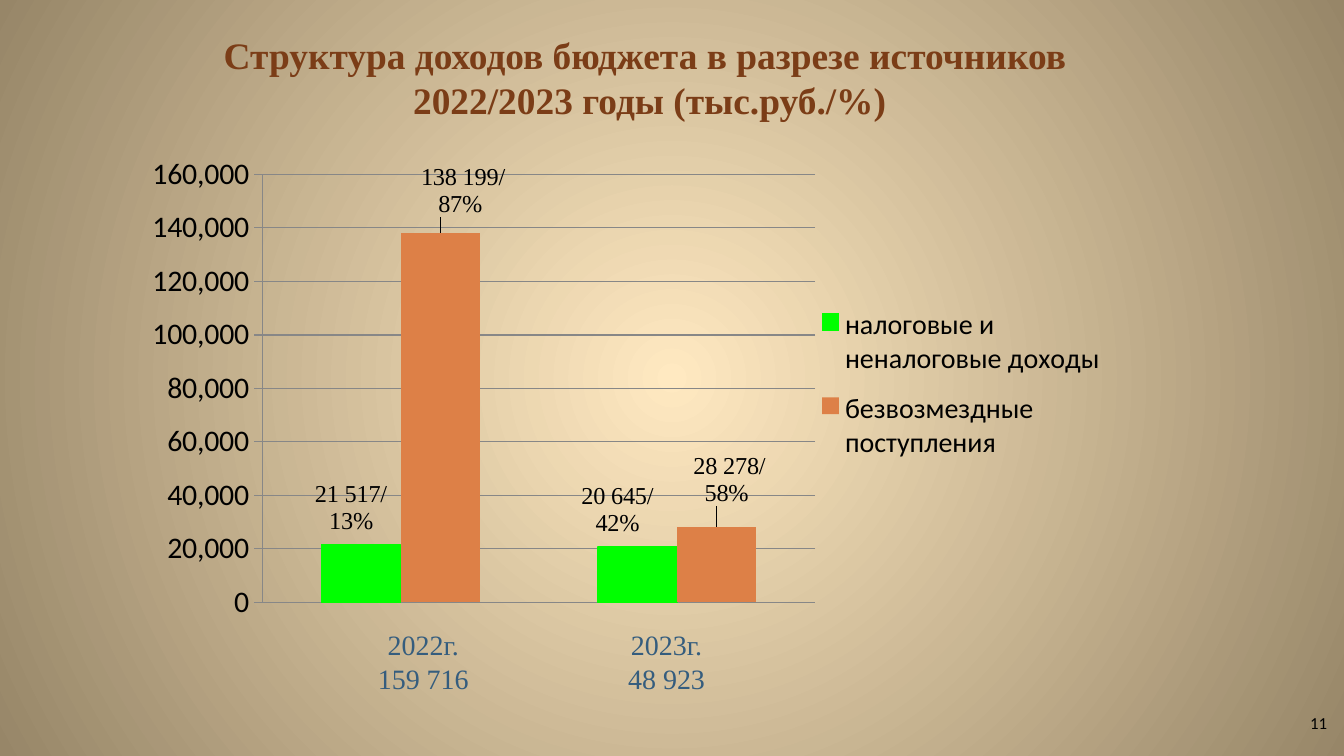
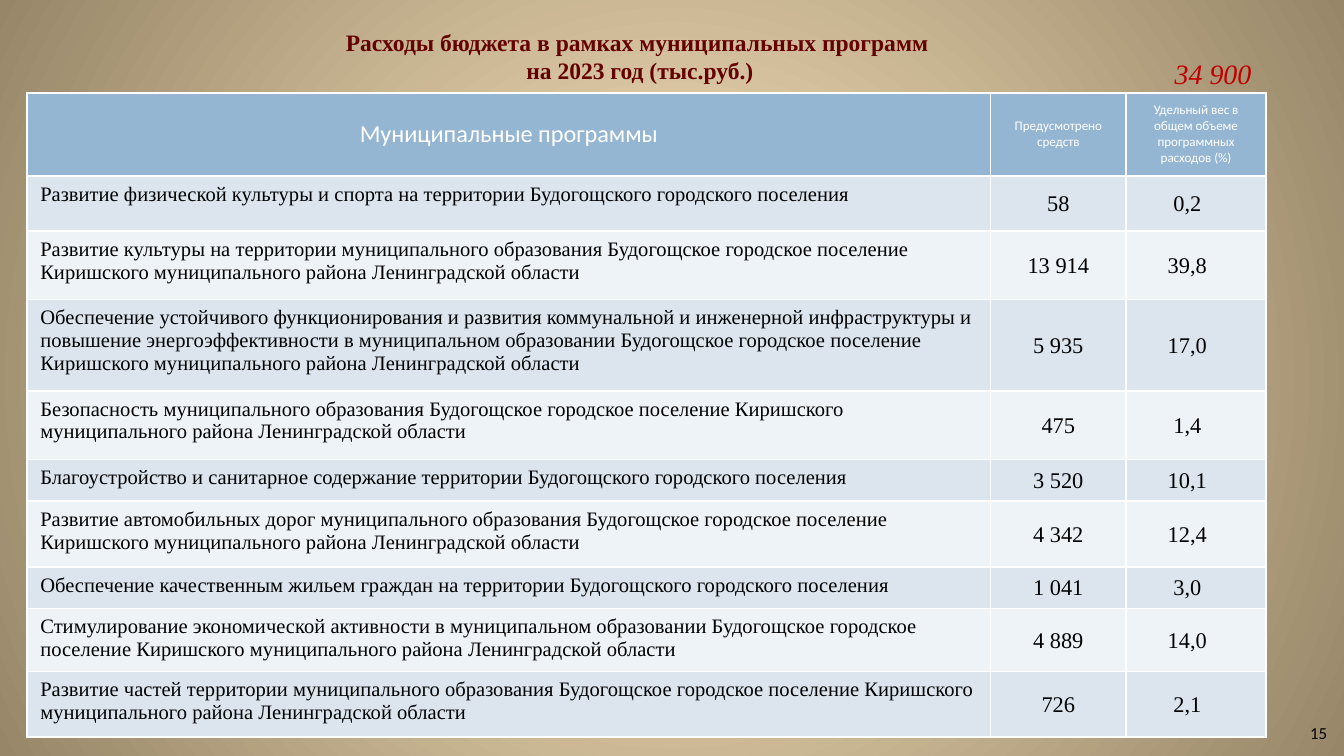
"""Build two budget slides: income by source and spending by programme."""
from dataclasses import dataclass

from lxml import etree
from pptx import Presentation
from pptx import util as u
from pptx.chart import data as cd
from pptx.dml import color as dc
from pptx.enum import chart as ce
from pptx.enum import text as te
from pptx.oxml import ns


@dataclass(frozen=True)
class Theme:
    """Colours, fonts and type sizes shared by the slides."""
    serif: str = "Times New Roman"
    sans: str = "Calibri"
    ink: str = "000000"
    white: str = "FFFFFF"
    glow: str = "FFE9C1"
    edge: str = "978668"
    brown: str = "7B3D17"
    wine: str = "640000"
    red: str = "C00000"
    blue: str = "355D7E"
    green: str = "00FF00"
    orange: str = "DD8047"
    grid: str = "878787"
    head: str = "94B6D2"
    bands: tuple = ("DCE5EE", "EEF3F7")
    title: float = 20
    small: float = 12.6
    note: float = 15
    page: float = 9
    chart: float = 18
    axis: float = 16
    tag: float = 13
    heads: tuple = (13, 7, 7)
    cells: tuple = (11, 12, 12)


T = Theme()
MID, TOP = te.MSO_ANCHOR.MIDDLE, te.MSO_ANCHOR.TOP
LEFT, CENTER, RIGHT = te.PP_ALIGN.LEFT, te.PP_ALIGN.CENTER, te.PP_ALIGN.RIGHT
C15 = "http://schemas.microsoft.com/office/drawing/2012/chart"

SERIES = (
    ("налоговые и неналоговые доходы", (21517, 20645), T.green,
     (("21 517/\n13%", -0.01, -0.01), ("20 645/\n42%", -0.02, -0.01))),
    ("безвозмездные поступления", (138199, 28278), T.orange,
     ((" 138 199/\n87%", 0.02, -0.02), (" 28 278/\n58%", 0.01, -0.03))),
)
YEARS = (("2022г.\n159 716", (2.48, 4.62, 1.34, 0.61)),
         ("2023г.\n48 923", (4.21, 4.62, 1.5, 0.61)))

AREA = "Киришского муниципального района Ленинградской области"
TOWN = f"Будогощское городское поселение {AREA}"
LAND = "территории Будогощского городского поселения"
HEADS = ("Муниципальные программы", "Предусмотрено средств",
         "Удельный вес в общем объеме программных расходов (%)")
ROWS = (
    (0.41, f"Развитие физической культуры и спорта на {LAND}", "58", "0,2"),
    (0.51, f"Развитие культуры на территории муниципального образования {TOWN}",
     "13 914", "39,8"),
    (0.68, "Обеспечение устойчивого функционирования и развития коммунальной и "
     "инженерной инфраструктуры и повышение энергоэффективности в "
     f"муниципальном образовании {TOWN}", "5 935", "17,0"),
    (0.51, f"Безопасность муниципального образования {TOWN}", "475", "1,4"),
    (0.31, f"Благоустройство и санитарное содержание {LAND}", "3 520", "10,1"),
    (0.49, f"Развитие автомобильных дорог муниципального образования {TOWN}",
     "4 342", "12,4"),
    (0.31, f"Обеспечение качественным жильем граждан на {LAND}", "1 041", "3,0"),
    (0.39, "Стимулирование экономической активности в муниципальном "
     f"образовании {TOWN}", "4 889", "14,0"),
    (0.49, f"Развитие частей территории муниципального образования {TOWN}",
     "726", "2,1"),
)


def rgb(hue):
    """Turn a hex string into a colour."""
    return dc.RGBColor.from_string(hue)


def ink(font, size, hue=T.ink, face=T.serif, bold=False, slant=False):
    """Style one font."""
    font.size, font.name = u.Pt(size), face
    font.bold, font.italic = bold, slant
    font.color.rgb = rgb(hue)


def fill_text(frame, words, size, align=LEFT, **look):
    """Put words in a text frame and format its runs."""
    frame.text = words
    for para in frame.paragraphs:
        para.alignment = align
        for run in para.runs:
            ink(run.font, size, **look)


def label(slide, box, words, size, align=CENTER, anchor=TOP, **look):
    """Add a text box."""
    frame = slide.shapes.add_textbox(*map(u.Inches, box)).text_frame
    frame.word_wrap = True
    frame.vertical_anchor = anchor
    fill_text(frame, words, size, align, **look)


def base(deck, title, box, size, hue, page, top):
    """Add a slide with its glow, title and page number."""
    slide = deck.slides.add_slide(deck.slide_layouts[6])
    fill = slide.background.fill
    fill.gradient()
    for stop, tone, spot in zip(fill.gradient_stops, (T.glow, T.edge), (0, 1)):
        stop.color.rgb, stop.position = rgb(tone), spot
    grad = slide.element.find(".//" + ns.qn("a:gradFill"))
    grad.remove(grad.find(ns.qn("a:lin")))
    ring = etree.SubElement(grad, ns.qn("a:path"), path="circle")
    etree.SubElement(ring, ns.qn("a:fillToRect"),
                     {side: "50000" for side in "ltrb"})
    label(slide, box, title, size, anchor=MID, hue=hue, bold=True)
    label(slide, (9.65, top, 0.42, 0.25), page, T.page, LEFT, face=T.sans)
    return slide


def layout(host, spot, inner=False, **parts):
    """Insert a manual chart layout at the given child position."""
    for old in host.findall(ns.qn("c:layout")):
        host.remove(old)
    node = etree.Element(ns.qn("c:layout"))
    man = etree.SubElement(node, ns.qn("c:manualLayout"))
    if inner:
        etree.SubElement(man, ns.qn("c:layoutTarget"), val="inner")
    if "w" in parts:
        for mode in ("xMode", "yMode"):
            etree.SubElement(man, ns.qn("c:" + mode), val="edge")
    for key, val in parts.items():
        etree.SubElement(man, ns.qn("c:" + key), val=str(val))
    host.insert(spot, node)


def tag_bars(bars, tags):
    """Give each bar its own shifted label without a leader line."""
    group = bars.data_labels
    group.show_value = True
    ink(group.font, T.tag, bold=True)
    for i, (words, dx, dy) in enumerate(tags):
        tag = bars.points[i].data_label
        fill_text(tag.text_frame, words, T.tag, CENTER)
        tag.position = ce.XL_LABEL_POSITION.OUTSIDE_END
        node = group._element.findall(ns.qn("c:dLbl"))[i]
        layout(node, 1, x=dx, y=dy)
    more = etree.SubElement(group._element, ns.qn("c:extLst"))
    ext = etree.SubElement(more, ns.qn("c:ext"), nsmap={"c15": C15},
                           uri="{CE6537A1-D6FC-4f65-9D91-7224C49458BB}")
    etree.SubElement(ext, f"{{{C15}}}showLeaderLines", val="0")


def bar_chart(slide, box):
    """Draw the income columns."""
    data = cd.CategoryChartData(number_format="#,##0")
    data.categories = ("1", "2")
    for name, vals, *_ in SERIES:
        data.add_series(name, vals)
    chart = slide.shapes.add_chart(ce.XL_CHART_TYPE.COLUMN_CLUSTERED,
                                   *map(u.Inches, box), data).chart
    ink(chart.font, T.chart, face=T.sans)
    chart.has_title = False
    plot = chart.plots[0]
    plot.gap_width, plot.overlap, plot.vary_by_categories = 150, 0, False
    for bars, (_, _, hue, tags) in zip(plot.series, SERIES):
        bars.format.fill.solid()
        bars.format.fill.fore_color.rgb = rgb(hue)
        tag_bars(bars, tags)
    edge = plot.series[0].format.line
    edge.color.rgb, edge.width = rgb(T.green), u.Pt(0.75)
    chart.category_axis.visible = False
    axis = chart.value_axis
    axis.minimum_scale, axis.maximum_scale, axis.major_unit = 0, 160000, 20000
    axis.major_tick_mark = ce.XL_TICK_MARK.CROSS
    ink(axis.tick_labels.font, T.axis, face=T.sans)
    for part in (axis, axis.major_gridlines):
        part.format.line.color.rgb = rgb(T.grid)
        part.format.line.width = u.Pt(0.75)
    chart.has_legend = True
    key = chart.legend
    key.position, key.include_in_layout = ce.XL_LEGEND_POSITION.RIGHT, False
    ink(key.font, T.note, face=T.sans)
    layout(key._element, 1, x=0.67, y=0.3, w=0.31, h=0.38)
    area = chart.element.find(".//" + ns.qn("c:plotArea"))
    layout(area, 0, inner=True, x=0.13, y=0.06, w=0.55, h=0.88)


def edges(cell, foot):
    """Rule the four sides of a cell in white."""
    props = cell._tc.get_or_add_tcPr()
    for side, width in (("L", 1), ("R", 1), ("T", 1), ("B", foot)):
        line = etree.SubElement(props, ns.qn("a:ln" + side),
                                w=str(u.Pt(width)))
        paint = etree.SubElement(line, ns.qn("a:solidFill"))
        etree.SubElement(paint, ns.qn("a:srgbClr"), val=T.white)


def set_cell(cell, words, size, back, align=CENTER, anchor=MID, foot=1, **look):
    """Fill, rule and write one table cell."""
    edges(cell, foot)
    cell.fill.solid()
    cell.fill.fore_color.rgb = rgb(back)
    cell.vertical_anchor = anchor
    fill_text(cell.text_frame, words, size, align, **look)


def plan_table(slide, box):
    """Draw the table of programmes."""
    grid = slide.shapes.add_table(len(ROWS) + 1, len(HEADS),
                                  *map(u.Inches, box)).table
    grid.first_row = grid.horz_banding = False
    for col, width in zip(grid.columns, (7.17, 1.01, 1.04)):
        col.width = u.Inches(width)
    for row, tall in zip(grid.rows, (0.62, *(r[0] for r in ROWS))):
        row.height = u.Inches(tall)
    for j, (words, size) in enumerate(zip(HEADS, T.heads)):
        set_cell(grid.cell(0, j), words, size, T.head,
                 hue=T.white, face=T.sans)
    for i, (_, *texts) in enumerate(ROWS):
        for j, (words, size) in enumerate(zip(texts, T.cells)):
            cell, back = grid.cell(i + 1, j), T.bands[i % 2]
            if j == 0:
                set_cell(cell, words, size, back, LEFT, TOP)
                continue
            set_cell(cell, words, size, back)
            cell.margin_left = cell.margin_top = u.Inches(0.01)
            cell.margin_right = u.Inches((0.01, 0.14)[j - 1])
            cell.margin_bottom = 0


def income(deck):
    """Build the income slide."""
    slide = base(deck, "Структура доходов бюджета в разрезе источников \v"
                 "2022/2023 годы (тыс.руб./%)", (0.5, 0.14, 8.67, 0.87),
                 T.title, T.brown, "11", 5.25)
    bar_chart(slide, (0.98, 1.08, 7.48, 3.62))
    for words, box in YEARS:
        label(slide, box, words, T.note, hue=T.blue)


def spending(deck):
    """Build the spending slide."""
    slide = base(deck, "Расходы бюджета в рамках муниципальных программ \v"
                 "на 2023 год (тыс.руб.)", (0.5, 0.14, 8.52, 0.55),
                 T.small, T.wine, "15", 5.33)
    plan_table(slide, (0.2, 0.69, 9.21, 4.79))
    label(slide, (7.99, 0.37, 1.42, 0.35), "34 900", T.note, RIGHT,
          hue=T.red, slant=True)


def main():
    """Build and save the deck."""
    deck = Presentation()
    deck.slide_width = u.Inches(10)
    deck.slide_height = deck.slide_width * 9 // 16
    income(deck)
    spending(deck)
    deck.save("out.pptx")


if __name__ == "__main__":
    main()
